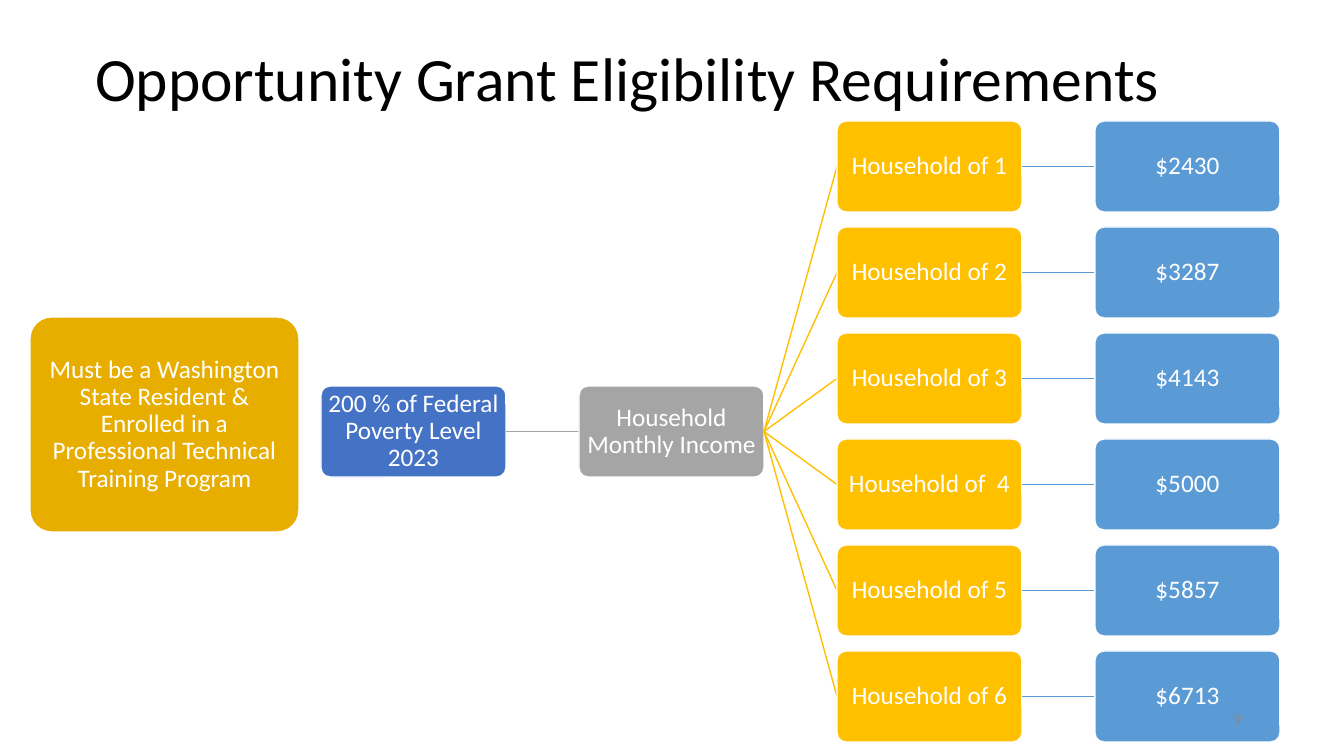
from pptx import Presentation
from pptx import util as u
from pptx.dml.color import RGBColor
from pptx.enum import shapes, text
from pptx.oxml.ns import qn
from lxml import etree

TITLE = "Opportunity Grant Eligibility Requirements"
RULE = "Must be a Washington State Resident & Enrolled in a Professional Technical Training Program"
LEVEL = "200 % of Federal Poverty Level 2023"
INCOME = "Household Monthly Income"
LIMITS = [
    ("Household of 1", "$2430"),
    ("Household of 2", "$3287"),
    ("Household of 3", "$4143"),
    ("Household of  4", "$5000"),
    ("Household of 5", "$5857"),
    ("Household of 6", "$6713"),
]
NUMBER = "9"

THEME = {
    "font": "Calibri", "ink": "000000", "white": "FFFFFF", "mute": "898989",
    "rule": "E7AE00", "level": "4472C4", "income": "A5A5A5",
    "house": "FFC000", "limit": "5B9BD5",
    "title": 44, "body": 18, "small": 12, "line": 1,
}
WIDE, HIGH = 1344, 756
LEFT, TOP = 321, 121
STEP_X, STEP_Y = 258, 106
BOX_W, BOX_H = 185, 91
MID = TOP + STEP_Y * (len(LIMITS) - 1) // 2
ALIGN = text.PP_ALIGN


def px(n):
    return u.Emu(round(n * 914400 / 100.8))


def hue(name):
    return RGBColor.from_string(THEME[name])


def write(shape, words, size, color, align, pad, after=0):
    frame = shape.text_frame
    frame.word_wrap = True
    frame.vertical_anchor = text.MSO_ANCHOR.MIDDLE
    frame.margin_left = frame.margin_right = px(pad)
    frame.margin_top = frame.margin_bottom = px(min(pad, 5))
    para = frame.paragraphs[0]
    para.alignment = align
    para.line_spacing = 0.9
    para.space_after = u.Pt(after)
    run = para.add_run()
    run.text = words
    run.font.name = THEME["font"]
    run.font.size = u.Pt(THEME[size])
    run.font.color.rgb = hue(color)


def label(x, y, w, h, words, size, color, align):
    box = slide.shapes.add_textbox(px(x), px(y), px(w), px(h))
    write(box, words, size, color, align, 10)


def card(x, y, words, fill, w=BOX_W, h=BOX_H, pad=1):
    kind = shapes.MSO_SHAPE.ROUNDED_RECTANGLE
    box = slide.shapes.add_shape(kind, px(x), px(y), px(w), px(h))
    box.adjustments[0] = 0.1
    box.shadow.inherit = False
    box.fill.solid()
    box.fill.fore_color.rgb = hue(fill)
    box.line.color.rgb = hue("white")
    box.line.width = u.Pt(THEME["line"])
    write(box, words, "body", "white", ALIGN.CENTER, pad)


def link(col, start, end, color):
    x = LEFT + col * STEP_X
    half = BOX_H / 2
    line = slide.shapes.add_connector(
        shapes.MSO_CONNECTOR.STRAIGHT,
        px(x + BOX_W), px(start + half), px(x + STEP_X), px(end + half))
    line.line.color.rgb = hue(color)
    line.line.width = u.Pt(THEME["line"])
    etree.SubElement(line._element.spPr, qn("a:effectLst"))


deck = Presentation()
deck.slide_width, deck.slide_height = px(WIDE), px(HIGH)
slide = deck.slides.add_slide(deck.slide_layouts[6])

label(85, 9, 1159, 146, TITLE, "title", "ink", ALIGN.LEFT)
card(30, 317, RULE, "rule", 269, 215, 4)
card(LEFT, MID, LEVEL, "level")
link(0, MID, MID, "income")
card(LEFT + STEP_X, MID, INCOME, "income")

for row, (house, limit) in enumerate(LIMITS):
    y = TOP + row * STEP_Y
    link(1, MID, y, "house")
    card(LEFT + 2 * STEP_X, y, house, "house")
    link(2, y, y, "limit")
    card(LEFT + 3 * STEP_X, y, limit, "limit")

label(1202, 707, 50, 26, NUMBER, "small", "mute", ALIGN.RIGHT)
deck.save("out.pptx")
